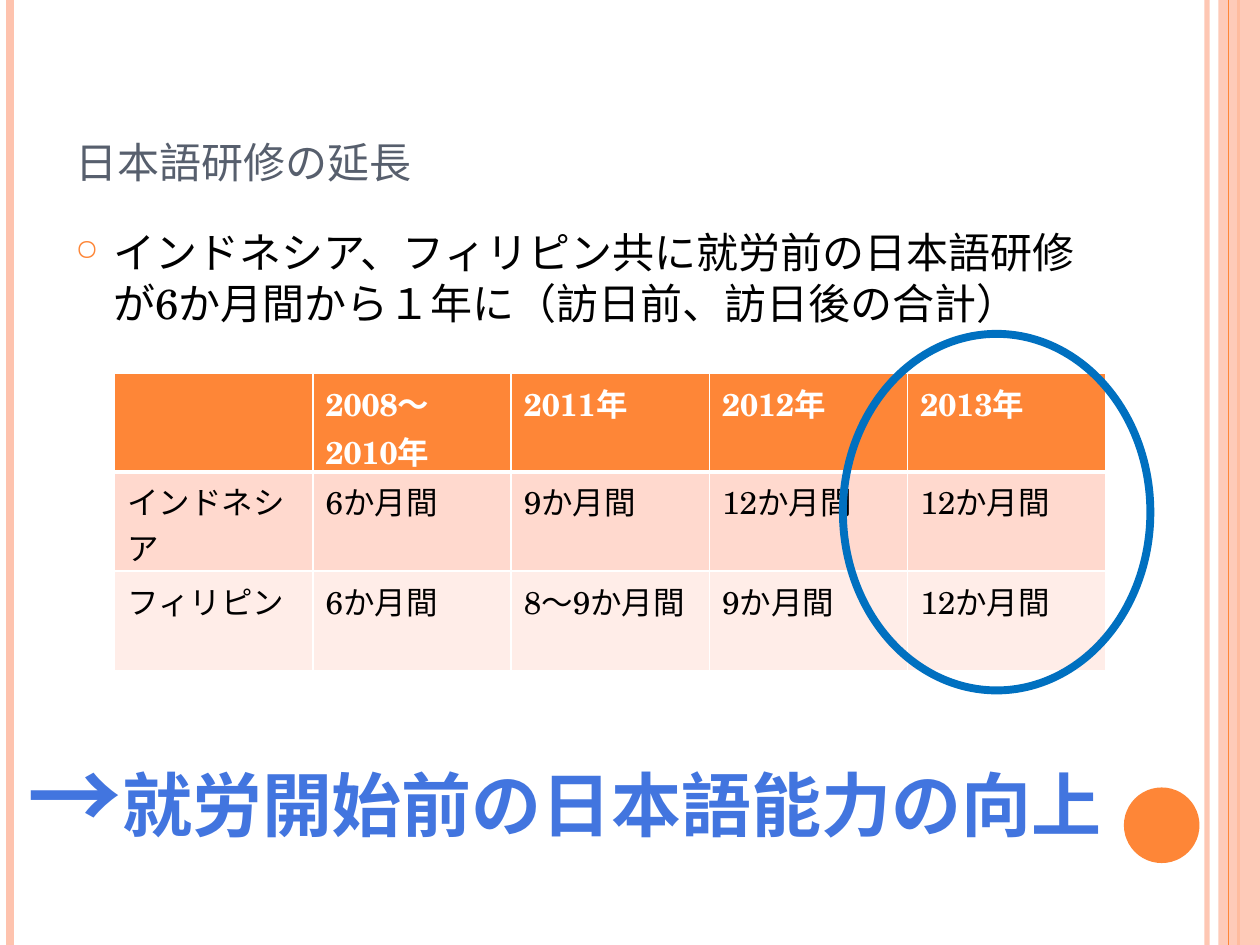
from lxml import etree
from pptx import Presentation
from pptx.dml.color import RGBColor
from pptx.enum.shapes import MSO_CONNECTOR, MSO_SHAPE
from pptx.enum.text import MSO_ANCHOR, MSO_AUTO_SIZE, PP_ALIGN
from pptx.oxml.ns import qn
from pptx.util import Inches, Pt

STRAIGHT = MSO_CONNECTOR.STRAIGHT
RECTANGLE, ELLIPSE = MSO_SHAPE.RECTANGLE, MSO_SHAPE.OVAL
LEFT, CENTER = PP_ALIGN.LEFT, PP_ALIGN.CENTER

ORANGE = RGBColor(0xFE, 0x86, 0x37)
PEACH = RGBColor(0xFE, 0xC3, 0xAE)
ROW_DARK = RGBColor(0xFF, 0xD9, 0xCE)
ROW_LIGHT = RGBColor(0xFF, 0xED, 0xE8)
SLATE = RGBColor(0x57, 0x5F, 0x6D)
RING_BLUE = RGBColor(0x00, 0x70, 0xC0)
MESSAGE_BLUE = RGBColor(0x42, 0x75, 0xDF)
BLACK = RGBColor(0, 0, 0)
WHITE = RGBColor(0xFF, 0xFF, 0xFF)

TRAINING_PERIODS = [
    ["", "2008～2010年", "2011年", "2012年", "2013年"],
    ["インドネシア", "6か月間", "9か月間", "12か月間", "12か月間"],
    ["フィリピン", "6か月間", "8～9か月間", "9か月間", "12か月間"],
]


def set_opacity(element, percent):
    """Make the first solid colour inside the element partly transparent."""
    color = next(element.iter(qn("a:srgbClr")))
    etree.SubElement(color, qn("a:alpha"), val=str(percent * 1000))


class SlideBuilder:
    heading_font = "Lato"
    body_font = "TeX Gyre Schola"

    def __init__(self, slide):
        self.slide = slide
        self.shapes = slide.shapes

    def style(self, font, size, color, bold=False, name=body_font):
        font.name, font.size, font.bold = name, Pt(size), bold
        font.color.rgb = color

    def title(self, text, left, top, width, height):
        title = self.shapes.title
        title.left, title.top = Inches(left), Inches(top)
        title.width, title.height = Inches(width), Inches(height)
        frame = title.text_frame
        frame.text = text
        frame.vertical_anchor = MSO_ANCHOR.BOTTOM
        frame.auto_size = MSO_AUTO_SIZE.NONE
        heading = frame.paragraphs[0]
        heading.alignment = LEFT
        self.style(heading.font, 30, SLATE, name=self.heading_font)
        heading.runs[0].font._element.set("cap", "small")

    def text_box(self, left, top, width, height):
        """Add a wrapping text box and return its first paragraph."""
        box = self.shapes.add_textbox(
            Inches(left), Inches(top), Inches(width), Inches(height))
        box.text_frame.word_wrap = True
        return box.text_frame.paragraphs[0]

    def bullet(self, text, left, top, width, height):
        item = self.text_box(left, top, width, height)
        item.text = text
        item.space_before = Pt(6)
        self.style(item.font, 24, BLACK)
        properties = item._p.get_or_add_pPr()
        indent = Inches(0.3)
        properties.set("marL", str(indent))
        properties.set("indent", str(-indent))
        bullet_color = etree.Element(qn("a:buClr"))
        etree.SubElement(bullet_color, qn("a:srgbClr"), val=str(ORANGE))
        bullet_size = etree.Element(qn("a:buSzPct"), val="70000")
        bullet_char = etree.Element(qn("a:buChar"), char="○")
        default_font = properties.find(qn("a:defRPr"))
        for part in (bullet_color, bullet_size, bullet_char):
            default_font.addprevious(part)

    def message(self, parts, left, top, width, height):
        """Add one centred line from (text, size) parts."""
        line = self.text_box(left, top, width, height)
        line.alignment = CENTER
        for text, size in parts:
            run = line.add_run()
            run.text = text
            self.style(run.font, size, MESSAGE_BLUE, bold=True)

    def vertical_rule(self, x, color, weight, opacity=100):
        rule = self.shapes.add_connector(
            STRAIGHT, Inches(x), 0, Inches(x), Inches(7.5))
        rule.line.color.rgb = color
        rule.line.width = Pt(weight)
        etree.SubElement(rule._element.spPr, qn("a:effectLst"))
        if opacity < 100:
            set_opacity(rule._element, opacity)

    def shape(self, kind, left, top, width, height,
              fill=None, line=None, weight=0, opacity=100):
        shape = self.shapes.add_shape(
            kind, Inches(left), Inches(top), Inches(width), Inches(height))
        shape.shadow.inherit = False
        if fill is None:
            shape.fill.background()
        else:
            shape.fill.solid()
            shape.fill.fore_color.rgb = fill
        if line is None:
            shape.line.fill.background()
        else:
            shape.line.color.rgb = line
            shape.line.width = Pt(weight)
        if opacity < 100:
            set_opacity(shape._element, opacity)

    def table(self, rows, left, top, width, height):
        table = self.shapes.add_table(
            len(rows), len(rows[0]), Inches(left), Inches(top),
            Inches(width), Inches(height)).table
        row_fills = [ORANGE, ROW_DARK, ROW_LIGHT]
        for r, (values, fill) in enumerate(zip(rows, row_fills)):
            is_header = r == 0
            for c, value in enumerate(values):
                cell = table.cell(r, c)
                cell.text = value
                cell.fill.solid()
                cell.fill.fore_color.rgb = fill
                self.style(cell.text_frame.paragraphs[0].font, 18,
                           WHITE if is_header else BLACK, bold=is_header)
                self.cell_borders(cell, top=3 if r == 1 else 1,
                                  bottom=3 if is_header else 1)

    def cell_borders(self, cell, top, bottom):
        properties = cell._tc.get_or_add_tcPr()
        sides = [("a:lnL", 1), ("a:lnR", 1), ("a:lnT", top), ("a:lnB", bottom)]
        for position, (side, weight) in enumerate(sides):
            border = etree.Element(qn(side), w=str(Pt(weight)))
            fill = etree.SubElement(border, qn("a:solidFill"))
            etree.SubElement(fill, qn("a:srgbClr"), val=str(WHITE))
            properties.insert(position, border)


def main():
    presentation = Presentation()
    presentation.slide_width = Inches(10)
    presentation.slide_height = Inches(7.5)
    title_only = presentation.slide_layouts[5]
    builder = SlideBuilder(presentation.slides.add_slide(title_only))

    builder.vertical_rule(9.58, PEACH, 3, opacity=93)
    builder.vertical_rule(0.08, PEACH, 4.5)
    builder.vertical_rule(9.83, ORANGE, 1.5)
    builder.shape(RECTANGLE, 9.67, 0, 0.33, 7.5, fill=PEACH, opacity=87)
    builder.vertical_rule(9.75, ORANGE, 0.75)
    builder.shape(ELLIPSE, 8.92, 6.25, 0.6, 0.6, fill=ORANGE)

    builder.title("日本語研修の延長", 0.5, 0.3, 8.17, 1.25)
    builder.bullet(
        "インドネシア、フィリピン共に就労前の日本語研修が6か月間から１年に（訪日前、訪日後の合計）",
        0.5, 1.75, 8.17, 5.33)
    builder.table(TRAINING_PERIODS, 0.91, 2.96, 7.87, 2.36)
    builder.shape(ELLIPSE, 6.69, 2.65, 2.44, 2.83, line=RING_BLUE, weight=4.5)
    builder.message([("→", 54), ("就労開始前の日本語能力の向上", 40)],
                    -0.14, 5.8, 9.24, 1.01)

    presentation.save("out.pptx")


if __name__ == "__main__":
    main()
